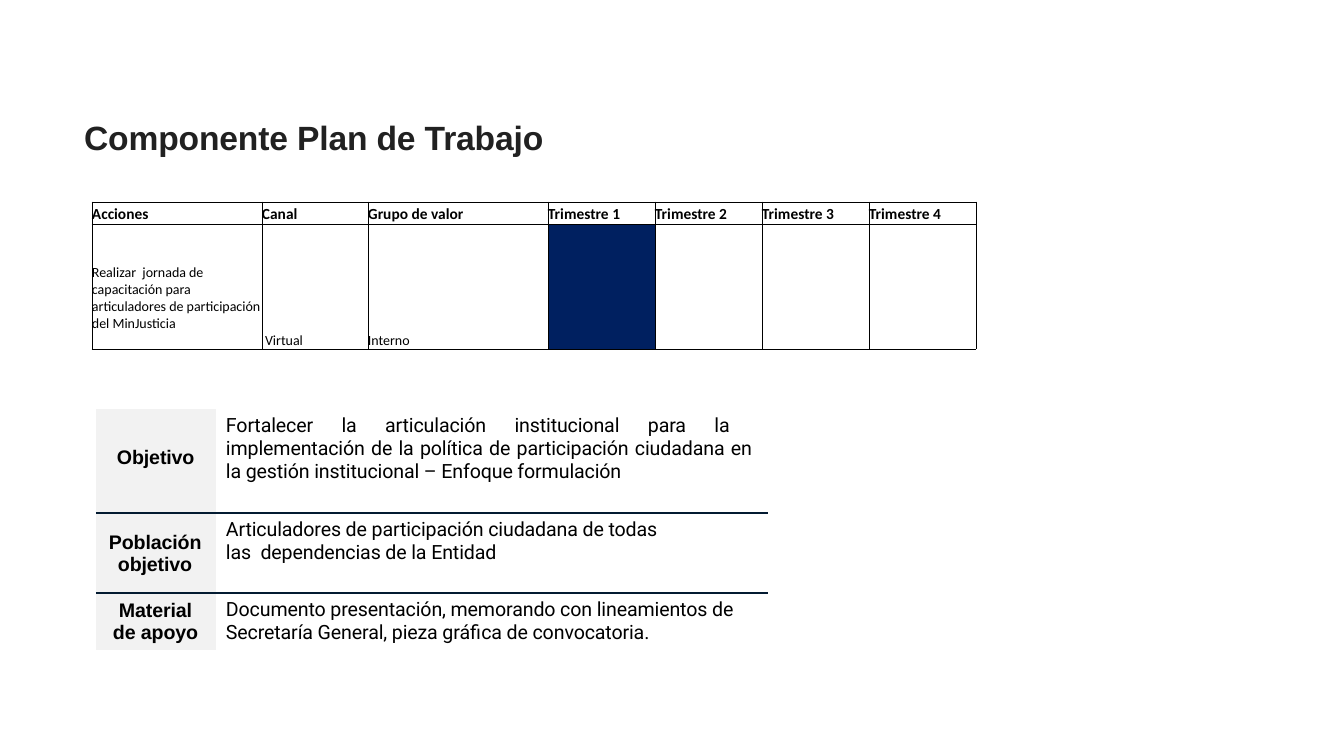
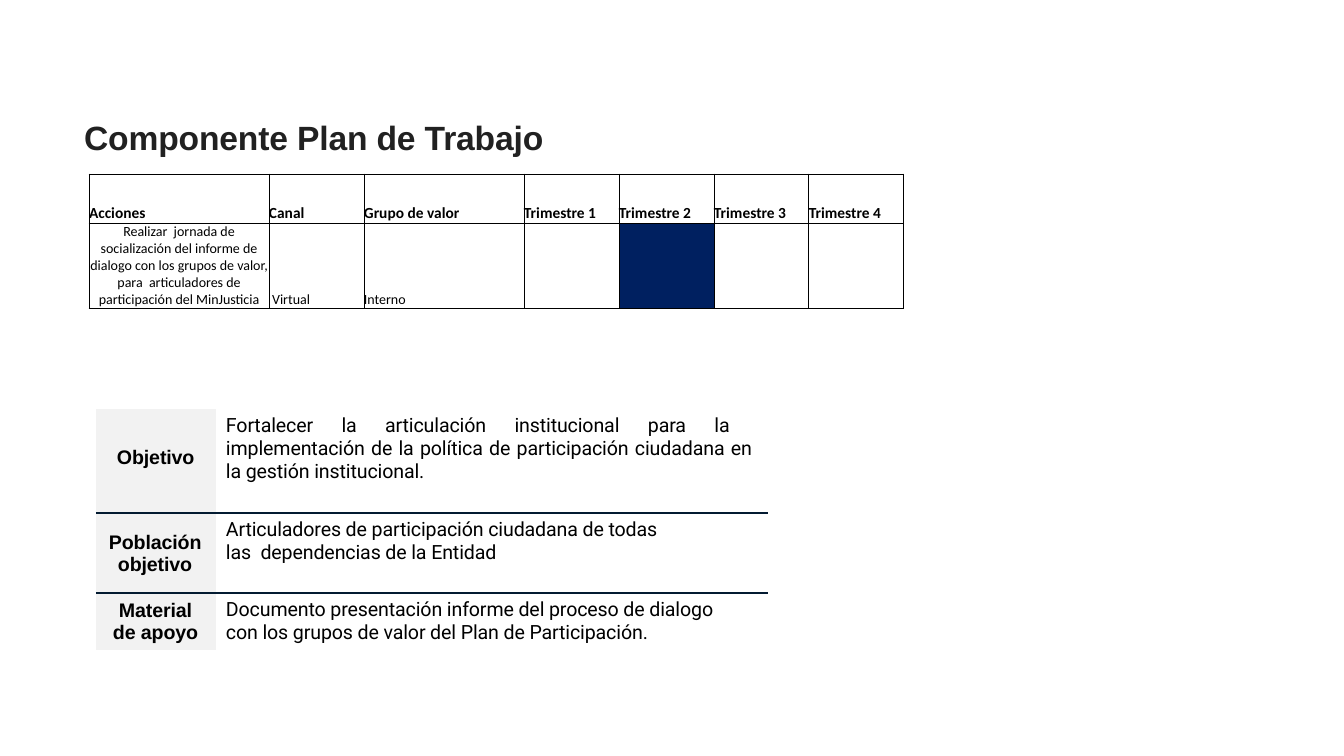
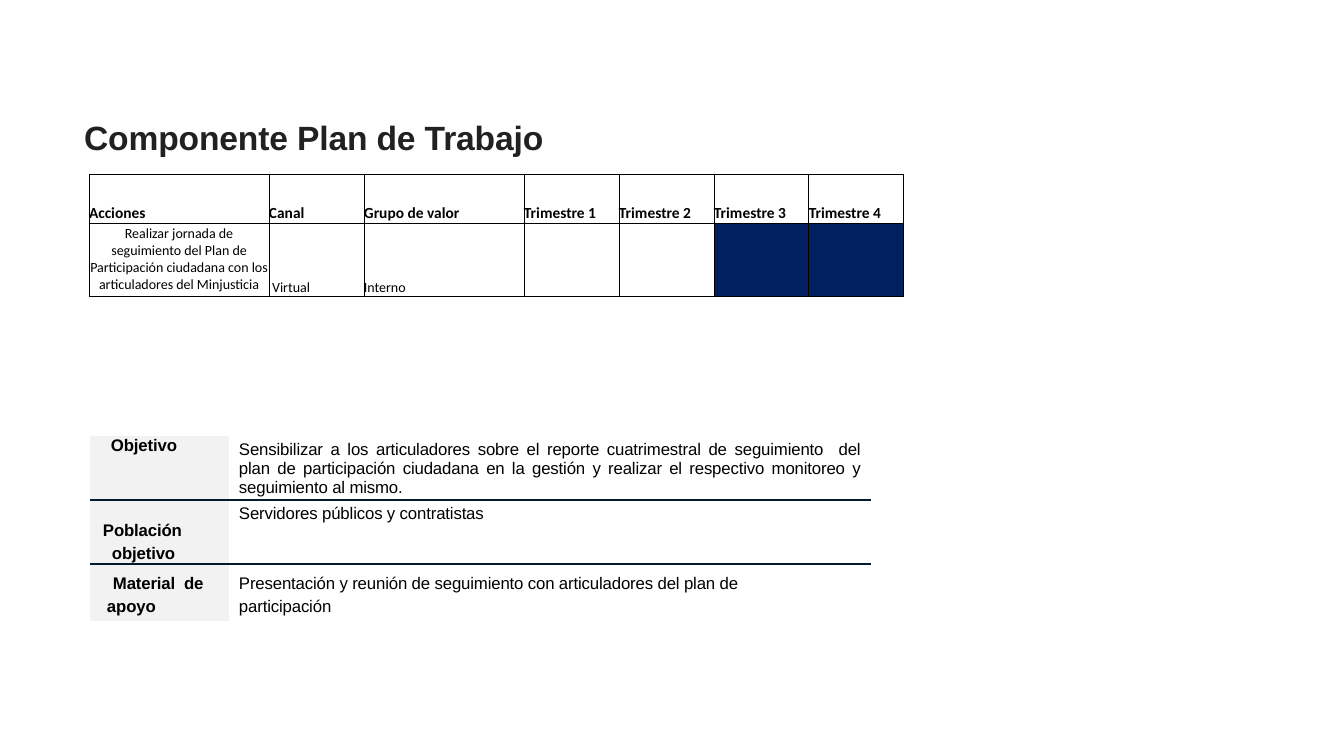
from lxml import etree
from pptx import Presentation
from pptx.dml.color import RGBColor
from pptx.enum.text import MSO_ANCHOR, PP_ALIGN
from pptx.oxml.ns import qn
from pptx.util import Pt

EMU = 914400 / 100.8  # one px
BLACK = RGBColor(0x00, 0x00, 0x00)
INK = RGBColor(0x21, 0x21, 0x21)
NAVY = RGBColor(0x00, 0x20, 0x60)
RULE = RGBColor(0x03, 0x1B, 0x31)
GREY = RGBColor(0xF2, 0xF2, 0xF2)
LEFT, MID, JUST = PP_ALIGN.LEFT, PP_ALIGN.CENTER, PP_ALIGN.JUSTIFY
TOP, CENTRE, BASE = MSO_ANCHOR.TOP, MSO_ANCHOR.MIDDLE, MSO_ANCHOR.BOTTOM
PLAIN = "{2D5ABB26-0587-4C30-8999-92F81FD0307C}"
TIGHT = "-10"

HEADS = ["Acciones", "Canal", "Grupo de valor"] + [f"Trimestre {n}" for n in range(1, 5)]
LABELS = ["Objetivo", "Población  objetivo", "Material  de apoyo"]
WIDE = {"left": 92, "top": 202, "cols": [170, 106, 180] + [107] * 4, "rows": [22, 125],
        "anchor": BASE, "align": LEFT, "foot": 17}
SLIM = {"left": 89, "top": 174, "cols": [180, 95, 160] + [95] * 4, "rows": [49, 84],
        "anchor": CENTRE, "align": MID, "foot": 0}
TALL = {"left": 96, "top": 409, "cols": [120, 552], "rows": [104, 80, 57], "size": 14,
        "font": "Roboto", "head": 38, "tops": [5, 6, 6], "rights": [10, 90, 22],
        "aligns": [JUST, LEFT, LEFT], "leads": [0.99, Pt(16.1), Pt(16.1)]}
FLAT = {"left": 90, "top": 436, "cols": [139, 642], "rows": [64, 64, 57], "size": 12,
        "font": "Arial", "head": 0, "tops": [5, 5, 7], "rights": [10, 10, 60],
        "aligns": [JUST, LEFT, LEFT], "leads": [0.99, 0.99, Pt(16.1)]}
HANGS = [(21, 0), (22, -9), (17, 6)]  # left indent and first line of each label
STAFF = "Articuladores de participación ciudadana de todas las  dependencias de la Entidad"
GOAL = ("Fortalecer la articulación institucional para la  implementación de la política "
        "de participación ciudadana en  la gestión institucional")

PAGES = [
    {"grid": WIDE, "row": 125, "on": [1], "form": TALL,
     "task": "Realizar  jornada de capacitación para  articuladores de participación "
             "del MinJusticia",
     "facts": [GOAL + " – Enfoque formulación", STAFF,
               "Documento presentación, memorando con lineamientos de  Secretaría General, "
               "pieza gráfica de convocatoria."]},
    {"grid": SLIM, "row": 84, "on": [2], "form": TALL,
     "task": "Realizar  jornada de socialización del informe de dialogo con los grupos de "
             "valor, para  articuladores de participación del MinJusticia",
     "facts": [GOAL + ".", STAFF,
               "Documento presentación informe del proceso de dialogo con los grupos de "
               "valor del Plan de Participación."]},
    {"grid": SLIM, "row": 73, "on": [3, 4], "form": FLAT,
     "task": "Realizar jornada de seguimiento del Plan de Participación ciudadana con los "
             "articuladores del Minjusticia",
     "facts": ["Sensibilizar a los articuladores sobre el reporte cuatrimestral de "
               "seguimiento  del plan de participación ciudadana en la gestión y realizar "
               "el respectivo monitoreo y seguimiento al mismo.",
               "Servidores públicos y contratistas",
               "Presentación y reunión de seguimiento con articuladores del plan de "
               "participación"]},
]


def add_grid(slide, left, top, cols, rows, edges, color, width):
    """Add an unstyled table; edges(row) names the ruled sides of its cells."""
    size = [int(n * EMU) for n in (left, top, sum(cols), sum(rows))]
    table = slide.shapes.add_table(len(rows), len(cols), *size).table
    table.first_row = table.horz_banding = False
    table._tbl.tblPr.find(qn("a:tableStyleId")).text = PLAIN
    for col, n in zip(table.columns, cols):
        col.width = int(n * EMU)
    for r, n in enumerate(rows):
        table.rows[r].height = int(n * EMU)
        for cell in table.rows[r].cells:
            cell.margin_left = cell.margin_right = 0
            cell.margin_top = cell.margin_bottom = 0
            props = cell._tc.get_or_add_tcPr()
            for side in edges(r):
                line = etree.SubElement(props, qn("a:ln" + side), w=str(Pt(width)))
                fill = etree.SubElement(line, qn("a:solidFill"))
                etree.SubElement(fill, qn("a:srgbClr"), val=str(color))
            cell.fill.background()
    return table


def write(frame, text, font, size, bold=False, color=BLACK, align=LEFT):
    para = frame.paragraphs[0]
    para.alignment = align
    run = para.add_run()
    run.text = text
    run.font.name, run.font.size, run.font.bold = font, Pt(size), bold
    run.font.color.rgb = color
    return para


deck = Presentation()
deck.slide_width, deck.slide_height = int(1344 * EMU), int(756 * EMU)

for page in PAGES:
    slide = deck.slides.add_slide(deck.slide_layouts[5])
    title = slide.shapes.title
    title.left, title.top, title.width, title.height = [
        int(n * EMU) for n in (74, 112, 1053, 91)]
    title.text_frame.vertical_anchor = TOP
    para = write(title.text_frame, "Componente Plan de Trabajo", "Arial", 24, True, INK)
    para.runs[0]._r.get_or_add_rPr().set("spc", TIGHT)

    # Action and its quarters
    grid = page["grid"]
    rows = [grid["rows"][0], page["row"]]
    plan = add_grid(slide, grid["left"], grid["top"], grid["cols"], rows,
                    lambda r: "LRTB", BLACK, 0.5)
    for c, head in enumerate(HEADS):
        cell = plan.cell(0, c)
        cell.vertical_anchor = BASE
        write(cell.text_frame, head, "Calibri", 11, True)
    for c, text in enumerate([page["task"], "\u00a0Virtual", "Interno"]):
        cell = plan.cell(1, c)
        cell.vertical_anchor = BASE if c else grid["anchor"]
        write(cell.text_frame, text, "Calibri", 10, align=LEFT if c else grid["align"])
    plan.cell(1, 0).margin_bottom = int(grid["foot"] * EMU)
    for n in page["on"]:
        cell = plan.cell(1, n + 2)
        cell.fill.solid()
        cell.fill.fore_color.rgb = NAVY

    # Goal, audience and material
    form = page["form"]
    facts = add_grid(slide, form["left"], form["top"], form["cols"], form["rows"],
                     lambda r: ["B", "TB", "T"][r], RULE, 1.5)
    for r, (label, fact) in enumerate(zip(LABELS, page["facts"])):
        name, body = facts.cell(r, 0), facts.cell(r, 1)
        name.fill.solid()
        name.fill.fore_color.rgb = GREY
        name.margin_top = int([form["head"], 18, form["tops"][2]][r] * EMU)
        body.margin_top = int(form["tops"][r] * EMU)
        body.margin_right = int(form["rights"][r] * EMU)
        tag = write(name.text_frame, label, "Arial", form["size"], True)
        text = write(body.text_frame, fact, form["font"], form["size"],
                     align=form["aligns"][r])
        if r:
            tag.line_spacing = Pt(16.1)
        text.line_spacing = form["leads"][r]
        for para, (left, first) in ((tag, HANGS[r]), (text, (10, 0))):
            props = para._p.get_or_add_pPr()
            props.set("marL", str(int(left * EMU)))
            props.set("indent", str(int(first * EMU)))
            para.runs[0]._r.get_or_add_rPr().set("spc", TIGHT)

deck.save("out.pptx")
